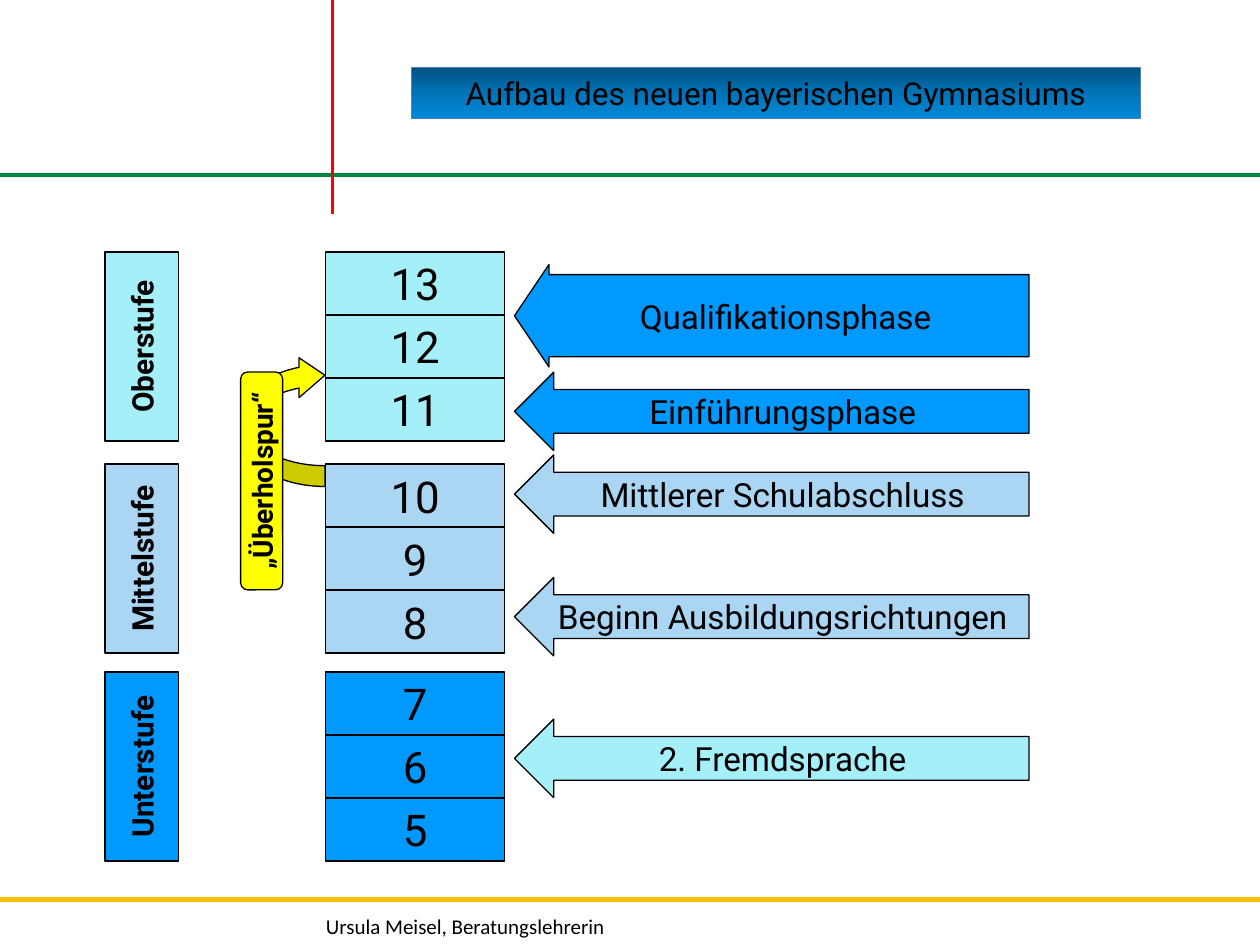
from copy import deepcopy
from dataclasses import dataclass

from pptx import Presentation
from pptx.dml.color import RGBColor
from pptx.enum import shapes, text
from pptx.oxml import ns
from pptx.util import Pt


@dataclass(frozen=True)
class Theme:
    font: str = "Roboto"
    plain: str = "Calibri"
    black: str = "000000"
    aqua: str = "A5EFF9"
    pale: str = "AAD6F4"
    blue: str = "0099FF"
    yellow: str = "FFFF00"
    green: str = "00863D"
    red: str = "FF0000"
    gold: str = "FFC000"
    edge: str = "4F81BD"
    fade: tuple = ("005181", "0073B7", "0089D9")
    title: int = 18
    grade: int = 25
    stage: int = 17
    phase: int = 19
    lane: int = 16
    foot: int = 12


@dataclass(frozen=True)
class Box:
    left: float
    top: float
    width: float
    height: float

    def points(self) -> tuple:
        return tuple(map(Pt, (self.left, self.top, self.width, self.height)))


@dataclass(frozen=True)
class Stage:
    name: str
    top: float
    fill: str
    grades: tuple


@dataclass(frozen=True)
class Phase:
    name: str
    top: float
    fill: str
    height: float = 44.8
    bends: tuple = (0.559, 0.5)


@dataclass(frozen=True)
class Rule:
    start: tuple
    end: tuple
    color: str
    width: float


LOOK = Theme()
KIND = shapes.MSO_SHAPE
ROW = 36

STAGES = (
    Stage("Oberstufe", 144, LOOK.aqua, ("13", "12", "11")),
    Stage("Mittelstufe", 265.2, LOOK.pale, ("10", "9", "8")),
    Stage("Unterstufe", 384, LOOK.blue, ("7", "6", "5")),
)
PHASES = (
    Phase("2. Fremdsprache", 411, LOOK.aqua),
    Phase("Beginn Ausbildungsrichtungen", 330, LOOK.pale),
    Phase("Mittlerer Schulabschluss", 260, LOOK.pale),
    Phase("Einführungsphase", 212.7, LOOK.blue),
    Phase("Qualifikationsphase", 151.2, LOOK.blue, 58.5, (0.803, 0.337)),
)
RULES = (
    Rule((0, 100), (720, 100), LOOK.green, 2.75),
    Rule((190, 0), (190, 122.5), LOOK.red, 2),
    Rule((0, 514), (720, 514), LOOK.gold, 2.75),
)


def apply(target, values: dict) -> None:
    for name, value in values.items():
        setattr(target, name, value)


def write(shape, words: str, size: int, bold: bool = False, font: str = LOOK.font,
          align=text.PP_ALIGN.CENTER, anchor=text.MSO_ANCHOR.MIDDLE) -> None:
    frame = shape.text_frame
    apply(frame, {
        "text": words, "word_wrap": True, "vertical_anchor": anchor,
        "margin_left": Pt(8), "margin_right": Pt(8),
        "margin_top": Pt(3.6), "margin_bottom": Pt(3.6),
        "auto_size": text.MSO_AUTO_SIZE.NONE,
    })
    line = frame.paragraphs[0]
    line.alignment = align
    face = line.runs[0].font
    apply(face, {"name": font, "size": Pt(size), "bold": bold})
    face.color.rgb = RGBColor.from_string(LOOK.black)


def stroke(line, color: str, width: float) -> None:
    line.color.rgb = RGBColor.from_string(color)
    line.width = Pt(width)


def block(slide, kind, box: Box, fill: str, bends: tuple = ()):
    shape = slide.shapes.add_shape(kind, *box.points())
    shape.shadow.inherit = False
    shape.fill.solid()
    shape.fill.fore_color.rgb = RGBColor.from_string(fill)
    stroke(shape.line, LOOK.black, 0.75)
    for spot, bend in enumerate(bends):
        shape.adjustments[spot] = bend
    return shape


def upright(shape) -> None:
    shape.element.txBody.bodyPr.set("vert", "vert270")


def draw_rule(slide, rule: Rule) -> None:
    line = slide.shapes.add_connector(
        shapes.MSO_CONNECTOR.STRAIGHT, *map(Pt, rule.start + rule.end))
    stroke(line.line, rule.color, rule.width)
    line.element.spPr.append(line.element.makeelement(ns.qn("a:effectLst"), {}))


def draw_title(slide) -> None:
    title = slide.shapes.title
    names = ("left", "top", "width", "height")
    apply(title, dict(zip(names, Box(235.2, 38.5, 416.4, 29.3).points())))
    title.fill.gradient()
    title.fill.gradient_angle = 270
    stops = title.element.spPr.find(f".//{ns.qn('a:gsLst')}")
    stops.append(deepcopy(stops[0]))
    for stop, color, place in zip(title.fill.gradient_stops, LOOK.fade, (0, 0.5, 1)):
        stop.color.rgb = RGBColor.from_string(color)
        stop.position = place
    stroke(title.line, LOOK.edge, 0.75)
    write(title, "Aufbau des neuen bayerischen Gymnasiums", LOOK.title)


def draw_stage(slide, stage: Stage) -> None:
    for row, grade in enumerate(stage.grades):
        box = Box(186.2, stage.top + row * ROW, 102, ROW)
        write(block(slide, KIND.RECTANGLE, box, stage.fill), grade, LOOK.grade)
    box = Box(60, stage.top, 42, ROW * len(stage.grades))
    label = block(slide, KIND.RECTANGLE, box, stage.fill)
    write(label, stage.name, LOOK.stage, bold=True)
    upright(label)


def draw_phase(slide, phase: Phase) -> None:
    box = Box(294, phase.top, 294, phase.height)
    arrow = block(slide, KIND.LEFT_ARROW, box, phase.fill, phase.bends)
    write(arrow, phase.name, LOOK.phase)


def draw_lane(slide) -> None:
    curve = block(slide, KIND.CURVED_RIGHT_ARROW, Box(138.2, 203, 47.5, 75),
                  LOOK.yellow, (0.25, 0.48, 0.311))
    curve.rotation = 180
    curve.element.spPr.xfrm.set("flipH", "1")
    lane = block(slide, KIND.FLOWCHART_ALTERNATE_PROCESS,
                 Box(137.5, 212.6, 24, 124.5), LOOK.yellow)
    write(lane, "„Überholspur“", LOOK.lane, bold=True)
    upright(lane)


def draw_foot(slide) -> None:
    foot = slide.shapes.add_textbox(*Box(178.3, 518.4, 244, 21.6).points())
    write(foot, "Ursula Meisel, Beratungslehrerin", LOOK.foot, font=LOOK.plain,
          align=text.PP_ALIGN.LEFT, anchor=text.MSO_ANCHOR.TOP)


def main() -> None:
    deck = Presentation()
    apply(deck, {"slide_width": Pt(720), "slide_height": Pt(540)})
    slide = deck.slides.add_slide(deck.slide_layouts.get_by_name("Title Only"))
    for rule in RULES:
        draw_rule(slide, rule)
    draw_foot(slide)
    draw_title(slide)
    for stage in STAGES:
        draw_stage(slide, stage)
    for phase in PHASES:
        draw_phase(slide, phase)
    draw_lane(slide)
    deck.save("out.pptx")


if __name__ == "__main__":
    main()
